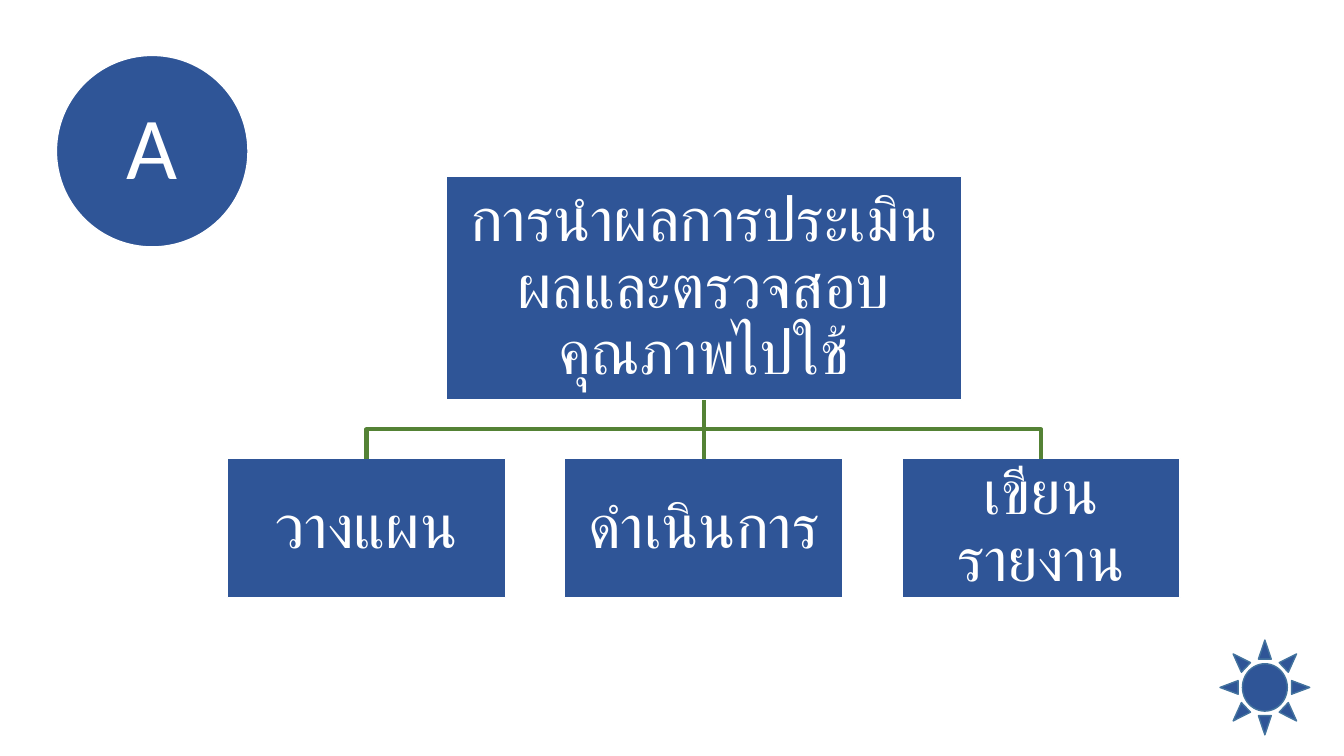
from dataclasses import dataclass

from lxml.etree import SubElement
from pptx import Presentation
from pptx.dml.color import RGBColor
from pptx.enum.lang import MSO_LANGUAGE_ID
from pptx.enum.shapes import MSO_CONNECTOR, MSO_SHAPE
from pptx.enum.text import MSO_ANCHOR, PP_ALIGN
from pptx.oxml.ns import qn
from pptx.util import Inches, Pt


@dataclass(frozen=True)
class Theme:
    blue: RGBColor = RGBColor(0x2F, 0x55, 0x97)
    white: RGBColor = RGBColor(0xFF, 0xFF, 0xFF)
    green: RGBColor = RGBColor(0x54, 0x82, 0x35)
    sun_edge: RGBColor = RGBColor(0x43, 0x73, 0x9E)
    font: str = "Calibri"
    letter_size: int = 63
    box_size: int = 44
    edge_width: int = 1
    branch_width: int = 3


theme = Theme()


def add_blue_shape(page, kind, left, top, width, height, edge=theme.white):
    shape = page.shapes.add_shape(
        kind, Inches(left), Inches(top), Inches(width), Inches(height))
    shape.shadow.inherit = False
    shape.fill.solid()
    shape.fill.fore_color.rgb = theme.blue
    shape.line.color.rgb = edge
    shape.line.width = Pt(theme.edge_width)
    return shape


def add_label(shape, text, size, inset, language):
    frame = shape.text_frame
    frame.word_wrap = True
    frame.vertical_anchor = MSO_ANCHOR.MIDDLE
    frame.margin_left = frame.margin_right = Inches(inset)
    frame.margin_top = frame.margin_bottom = Inches(inset)
    para = frame.paragraphs[0]
    para.alignment = PP_ALIGN.CENTER
    para.line_spacing = 0.9
    span = para.add_run()
    span.text = text
    span.font.name = theme.font
    span.font.size = Pt(size)
    span.font.color.rgb = theme.white
    span.font.language_id = language


deck = Presentation()
deck.slide_width, deck.slide_height = Inches(13.33), Inches(7.5)
page = deck.slides.add_slide(deck.slide_layouts[6])

# Section letter
badge = add_blue_shape(page, MSO_SHAPE.OVAL, 0.56, 0.55, 1.9, 1.9)
add_label(badge, "A", theme.letter_size, 0.09, MSO_LANGUAGE_ID.ENGLISH_US)

# Tree: one parent centred above a row of equal steps
center, column_pitch = 6.98, 3.345
parent_top, parent_width, parent_height = 1.75, 5.11, 2.22
step_top, step_width, step_height = 4.55, 2.76, 1.38
parent_bottom = parent_top + parent_height
bar_y = (parent_bottom + step_top) / 2

parent = add_blue_shape(page, MSO_SHAPE.RECTANGLE, center - parent_width / 2,
                        parent_top, parent_width, parent_height)
add_label(parent, "การนำผลการประเมินผลและตรวจสอบคุณภาพไปใช้",
          theme.box_size, 0.03, MSO_LANGUAGE_ID.THAI)

steps = ["วางแผน", "ดำเนินการ", "เขียนรายงาน"]
for column, name in enumerate(steps, start=-1):
    step_center = center + column * column_pitch
    step = add_blue_shape(page, MSO_SHAPE.RECTANGLE, step_center - step_width / 2,
                          step_top, step_width, step_height)
    add_label(step, name, theme.box_size, 0.03, MSO_LANGUAGE_ID.THAI)

    if column == 0:
        branch = page.shapes.add_connector(
            MSO_CONNECTOR.STRAIGHT, Inches(center), Inches(parent_bottom),
            Inches(center), Inches(step_top))
        branch.begin_connect(parent, 2)
        branch.end_connect(step, 0)
        SubElement(branch.element.spPr, qn("a:effectLst"))
    else:
        outline = page.shapes.build_freeform(
            Inches(center), Inches(parent_bottom))
        corners = [(center, bar_y), (step_center, bar_y), (step_center, step_top)]
        outline.add_line_segments(
            [(Inches(x), Inches(y)) for x, y in corners], close=False)
        branch = outline.convert_to_shape()
        branch.fill.background()
        branch.shadow.inherit = False
    branch.line.color.rgb = theme.green
    branch.line.width = Pt(theme.branch_width)

# Corner ornament
add_blue_shape(page, MSO_SHAPE.SUN, 12.1, 6.35, 0.89, 0.94, theme.sun_edge)

deck.save("out.pptx")
